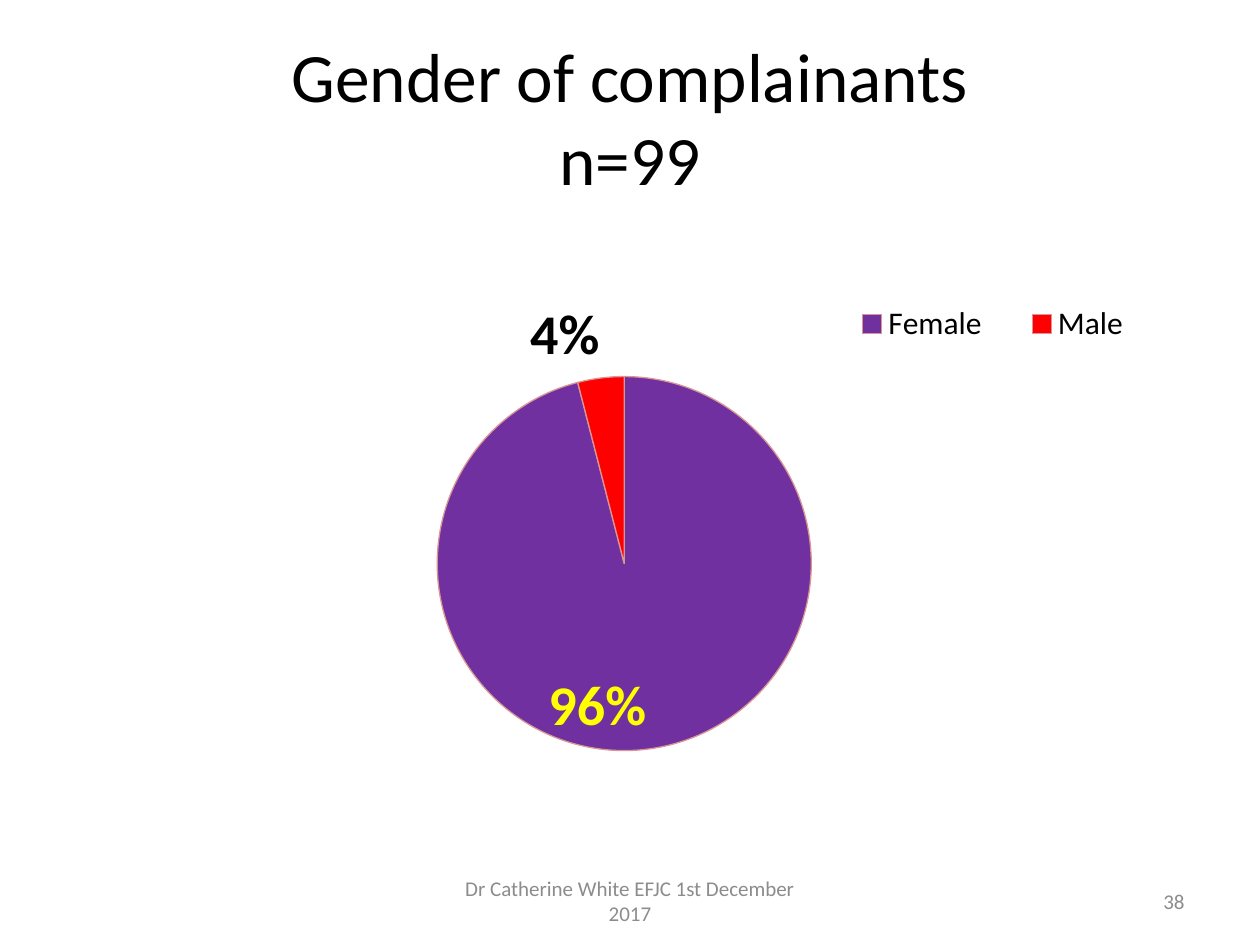
import dataclasses

import pptx
import pptx.chart.data
import pptx.dml.color
import pptx.enum.chart
import pptx.enum.text
import pptx.oxml
import pptx.oxml.ns
import pptx.util

Cm = pptx.util.Cm
Pt = pptx.util.Pt


@dataclasses.dataclass
class Theme:
    font: str = "Calibri"
    ink: str = "000000"
    muted: str = "8C8C8C"
    female: str = "7030A0"
    male: str = "FF0000"
    outline: str = "D99694"
    highlight: str = "FFFF00"
    title_size: float = 39.6
    label_size: float = 32
    legend_size: float = 18
    footer_size: float = 12


class SlideBuilder:
    def __init__(self, slide, theme):
        self.slide = slide
        self.theme = theme

    def style(self, font, size, color, bold=False):
        font.name = self.theme.font
        font.size = Pt(size)
        font.bold = bold
        font.color.rgb = pptx.dml.color.RGBColor.from_string(color)

    def fill_text(self, box, text, size, color, align):
        frame = box.text_frame
        frame.word_wrap = True
        frame.auto_size = pptx.enum.text.MSO_AUTO_SIZE.NONE
        frame.vertical_anchor = pptx.enum.text.MSO_ANCHOR.MIDDLE
        frame.text = text
        for para in frame.paragraphs:
            para.alignment = align
            for span in para.runs:
                self.style(span.font, size, color)

    def title(self, text, left, top, width, height):
        box = self.slide.shapes.title
        box.left, box.top, box.width, box.height = left, top, width, height
        self.fill_text(box, text, self.theme.title_size, self.theme.ink,
                       pptx.enum.text.PP_ALIGN.CENTER)

    def footer(self, text, left, width, align):
        box = self.slide.shapes.add_textbox(left, Cm(17.65), width, Cm(1.02))
        self.fill_text(box, text, self.theme.footer_size, self.theme.muted, align)

    def place(self, parent, index, x, y, w, h, inner=False):
        """Give a chart part a fixed place, in fractions of the chart."""
        for old in parent.findall(pptx.oxml.ns.qn("c:layout")):
            parent.remove(old)
        target = '<c:layoutTarget val="inner"/>' if inner else ""
        parent.insert(index, pptx.oxml.parse_xml(
            f'<c:layout {pptx.oxml.ns.nsdecls("c")}><c:manualLayout>{target}'
            '<c:xMode val="edge"/><c:yMode val="edge"/>'
            f'<c:x val="{x}"/><c:y val="{y}"/><c:w val="{w}"/><c:h val="{h}"/>'
            '</c:manualLayout></c:layout>'))

    def pie(self, shares, colors, left, top, width, height):
        theme = self.theme
        position = pptx.enum.chart.XL_LABEL_POSITION
        data = pptx.chart.data.CategoryChartData()
        data.categories = list(shares)
        data.add_series("Series 1", list(shares.values()))
        chart = self.slide.shapes.add_chart(
            pptx.enum.chart.XL_CHART_TYPE.PIE,
            left, top, width, height, data).chart
        chart.has_title = False
        self.style(chart.font, theme.legend_size, theme.ink)

        # Legend at the upper right, pie in the middle
        chart.has_legend = True
        chart.legend.position = pptx.enum.chart.XL_LEGEND_POSITION.TOP
        chart.legend.include_in_layout = False
        self.style(chart.legend.font, theme.legend_size, theme.ink)
        self.place(chart.legend._element, 1, 0.67, 0.13, 0.3, 0.07)
        self.place(chart._chartSpace.chart.plotArea, 0,
                   0.33, 0.25, 0.33, 0.6, inner=True)

        # Slices
        plot = chart.plots[0]
        plot.vary_by_categories = True
        series = plot.series[0]
        for index, color in enumerate(colors):
            look = series.points[index].format
            look.fill.solid()
            look.fill.fore_color.rgb = pptx.dml.color.RGBColor.from_string(color)
            look.line.width = Pt(0.75)
            look.line.color.rgb = pptx.dml.color.RGBColor.from_string(theme.outline)

        # Percentages: inside the large slice, outside the small one
        labels = series.data_labels
        labels.show_percentage = True
        labels.show_value = False
        labels.position = position.INSIDE_END
        self.style(labels.font, theme.label_size, theme.highlight, bold=True)
        small = series.points[1].data_label
        self.style(small.font, theme.label_size, theme.ink, bold=True)
        small.position = position.OUTSIDE_END
        for label in labels._element.findall(pptx.oxml.ns.qn("c:dLbl")):
            label.find(pptx.oxml.ns.qn("c:showVal")).set("val", "0")
            label.find(pptx.oxml.ns.qn("c:showPercent")).set("val", "1")


def main():
    deck = pptx.Presentation()
    deck.slide_width, deck.slide_height = Cm(25.4), Cm(19.05)
    theme = Theme()
    page = SlideBuilder(deck.slides.add_slide(deck.slide_layouts[5]), theme)
    margin, content = Cm(1.27), Cm(22.86)

    page.title("Gender of complainants\vn=99", margin, Cm(0.76), content, Cm(3.18))
    page.pie({"Female": 96, "Male": 4}, [theme.female, theme.male],
             margin, Cm(4.45), content, Cm(12.57))

    # Footer and page number
    page.footer("Dr Catherine White EFJC 1st December 2017",
                Cm(8.68), Cm(8.04), pptx.enum.text.PP_ALIGN.CENTER)
    page.footer("38", Cm(18.2), Cm(5.93), pptx.enum.text.PP_ALIGN.RIGHT)

    deck.save("out.pptx")


if __name__ == "__main__":
    main()
